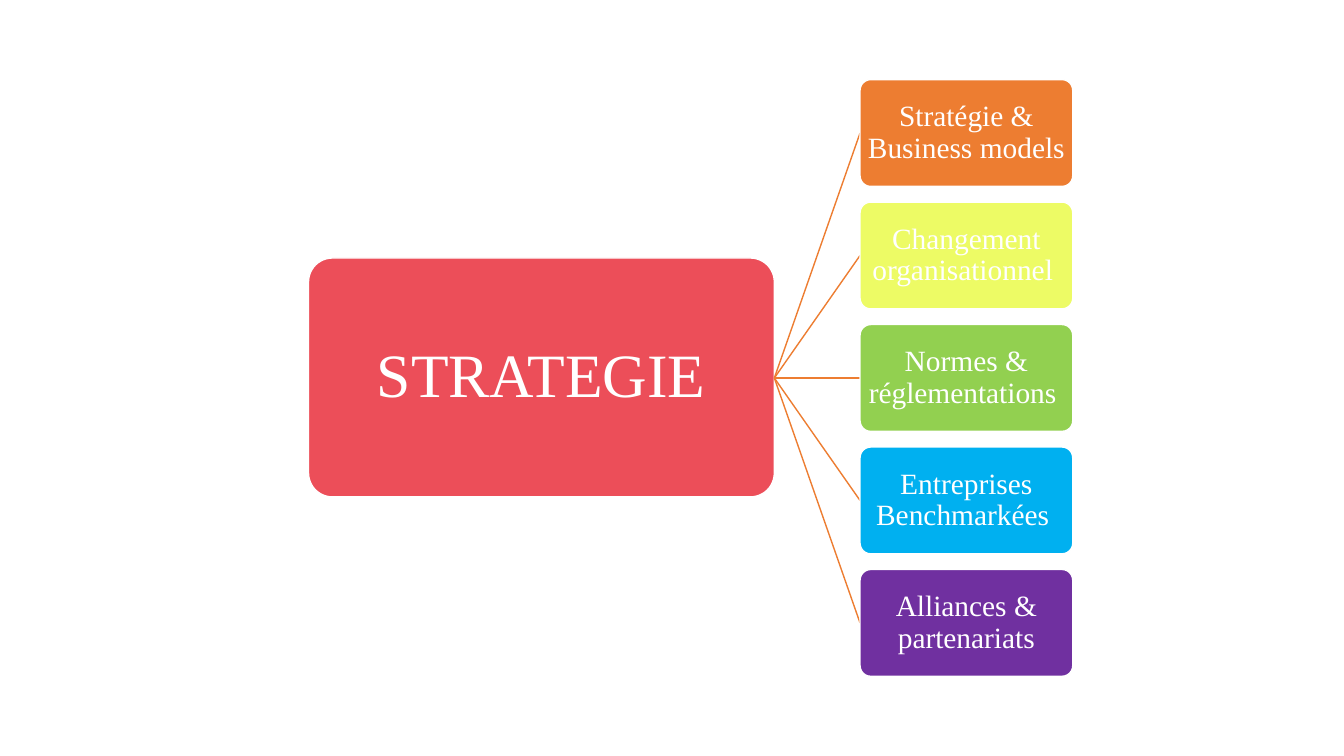
from collections import namedtuple
from dataclasses import dataclass

from lxml import etree
from pptx import Presentation
from pptx.dml.color import RGBColor
from pptx.enum.shapes import MSO_CONNECTOR as CONN, MSO_SHAPE as SHAPE
from pptx.enum.text import MSO_ANCHOR as ANCHOR, PP_ALIGN as ALIGN
from pptx.oxml.ns import qn
from pptx.util import Pt

PX = 9144
Box = namedtuple("Box", "x y w h")


@dataclass(frozen=True)
class Theme:
    font: str = "Times New Roman"
    white: str = "FFFFFF"
    root: str = "EC4E59"
    link: str = "ED7D31"
    root_size: int = 44
    branch_size: int = 21
    line_width: int = 1


THEME = Theme()
BRANCHES = [
    ("Stratégie & Business models", "ED7D31"),
    ("Changement organisationnel ", "EDFB65"),
    ("Normes & réglementations ", "92D050"),
    ("Entreprises Benchmarkées ", "00B0F0"),
    ("Alliances & partenariats", "7030A0"),
]


def px(n):
    return round(n * PX)


def set_line(line, color):
    line.color.rgb = RGBColor.from_string(color)
    line.width = Pt(THEME.line_width)


def add_node(s, box, text, fill, size, inset):
    sp = s.shapes.add_shape(SHAPE.ROUNDED_RECTANGLE, *map(px, box))
    sp.adjustments[0] = 0.1
    sp.shadow.inherit = False
    sp.fill.solid()
    sp.fill.fore_color.rgb = RGBColor.from_string(fill)
    set_line(sp.line, THEME.white)
    tf = sp.text_frame
    tf.word_wrap = True
    tf.vertical_anchor = ANCHOR.MIDDLE
    tf.margin_left = tf.margin_right = px(inset)
    tf.margin_top = tf.margin_bottom = px(inset)
    tf.text = text
    p = tf.paragraphs[0]
    p.alignment = ALIGN.CENTER
    p.line_spacing = 0.9
    font = p.runs[0].font
    font.name = THEME.font
    font.size = Pt(size)
    font.color.rgb = RGBColor.from_string(THEME.white)


def add_link(s, start, end):
    ends = map(px, (*start, *end))
    link = s.shapes.add_connector(CONN.STRAIGHT, *ends)
    set_line(link.line, THEME.link)
    etree.SubElement(link._element.spPr, qn("a:effectLst"))


def add_branches(s, box, node_h, hub):
    pitch = (box.h - node_h) / (len(BRANCHES) - 1)
    for i, (text, fill) in enumerate(BRANCHES):
        node = Box(box.x, box.y + i * pitch, box.w, node_h)
        add_link(s, hub, (node.x, node.y + node.h / 2))
        add_node(s, node, text, fill, THEME.branch_size, 1)


def add_strategy_map(s, box):
    root = Box(box.x, box.y + 177, 462, 237)
    hub = (root.x + root.w, box.y + box.h / 2)
    add_node(s, root, "STRATEGIE", THEME.root, THEME.root_size, 3)
    branches = Box(box.x + 547, box.y, 211, box.h)
    add_branches(s, branches, 106, hub)


def main():
    prs = Presentation()
    prs.slide_width, prs.slide_height = px(1333), px(750)
    s = prs.slides.add_slide(prs.slide_layouts[6])
    add_strategy_map(s, Box(306, 79, 758, 592))
    prs.save("out.pptx")


if __name__ == "__main__":
    main()
